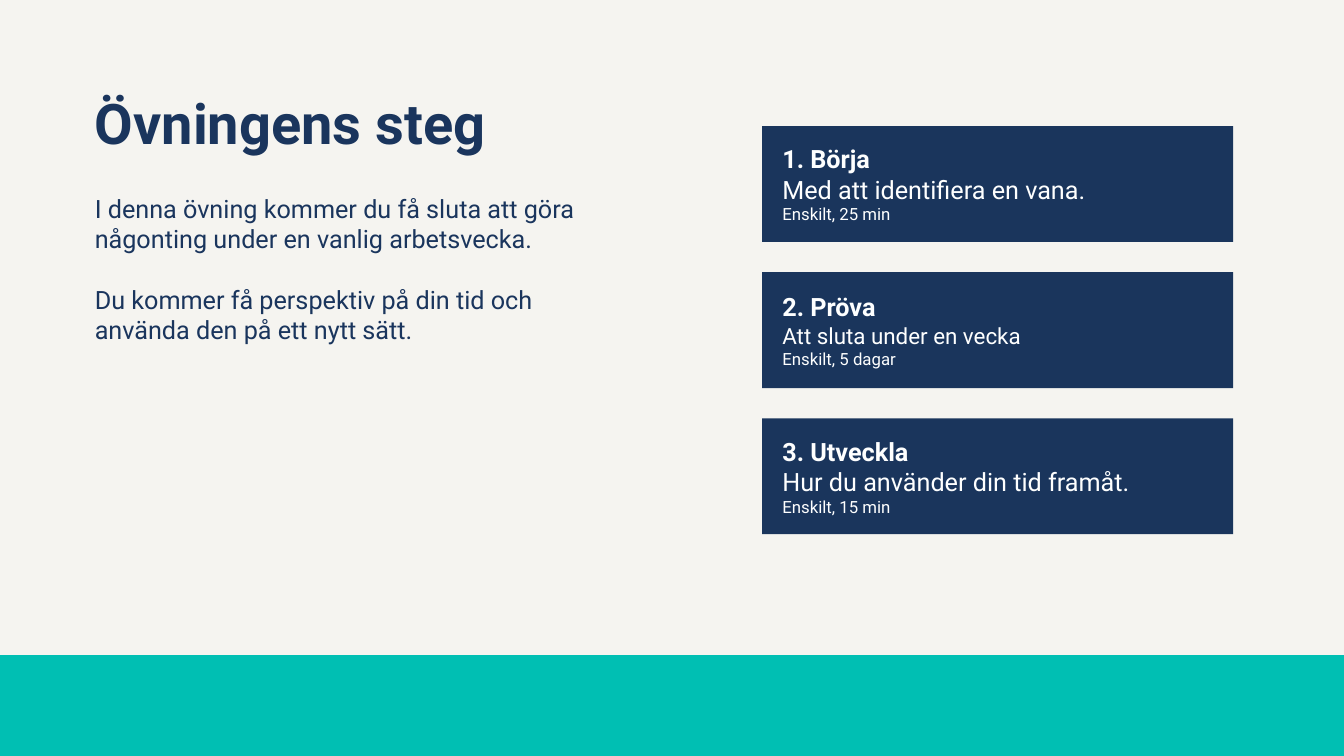
import pptx
import pptx.dml.color
import pptx.enum.shapes
import pptx.enum.text
import pptx.util
from pptx.util import Inches

COLORS = {
    "background": "F5F4F0",
    "band": "00BFB3",
    "heading": "1A355D",
    "card": "1A355C",
    "card_text": "FEFFFF",
}
FONT = "Roboto"
INTRODUCTION = [
    "I denna övning kommer du få sluta att göra någonting under en vanlig arbetsvecka.",
    "Du kommer få perspektiv på din tid och använda den på ett nytt sätt.",
]
STEPS = [
    ("1. Börja", "Med att identifiera en vana.", "Enskilt, 25 min", 18),
    ("2. Pröva", "Att sluta under en vecka", "Enskilt, 5 dagar", 16),
    ("3. Utveckla", "Hur du använder din tid framåt.", "Enskilt, 15 min", 18),
]
CARD_TOP = 1.25
CARD_PITCH = 1.45


def color(name):
    """Return the named colour."""
    return pptx.dml.color.RGBColor.from_string(COLORS[name])


def format_paragraph(paragraph, size, color_name, bold=False):
    """Left-align a paragraph and style its runs."""
    paragraph.alignment = pptx.enum.text.PP_ALIGN.LEFT
    for run in paragraph.runs:
        run.font.name = FONT
        run.font.size = pptx.util.Pt(size)
        run.font.bold = bold
        run.font.color.rgb = color(color_name)


def set_frame(text_frame, anchor, left=0, top=0, right=0, bottom=0):
    """Set wrapping, anchor and insets in inches."""
    text_frame.word_wrap = True
    text_frame.auto_size = pptx.enum.text.MSO_AUTO_SIZE.NONE
    text_frame.vertical_anchor = anchor
    text_frame.margin_left = Inches(left)
    text_frame.margin_top = Inches(top)
    text_frame.margin_right = Inches(right)
    text_frame.margin_bottom = Inches(bottom)


def add_rectangle(slide, left, top, width, height, color_name):
    """Add a flat rectangle without outline."""
    shape = slide.shapes.add_shape(
        pptx.enum.shapes.MSO_SHAPE.RECTANGLE,
        Inches(left), Inches(top), Inches(width), Inches(height))
    shape.shadow.inherit = False
    shape.fill.solid()
    shape.fill.fore_color.rgb = color(color_name)
    shape.line.fill.background()
    return shape


def add_title(slide, text):
    """Place and style the title placeholder."""
    title = slide.shapes.title
    title.left, title.top = Inches(0.94), Inches(0.94)
    title.width, title.height = Inches(11.5), Inches(0.61)
    title.text_frame.text = text
    set_frame(title.text_frame, pptx.enum.text.MSO_ANCHOR.BOTTOM)
    paragraph = title.text_frame.paragraphs[0]
    paragraph.line_spacing = 0.9
    format_paragraph(paragraph, 40, "heading", bold=True)


def add_introduction(slide, texts):
    """Add the introductory paragraphs."""
    box = slide.shapes.add_textbox(
        Inches(0.94), Inches(1.57), Inches(5.17), Inches(3.68))
    box.text_frame.text = "\n".join(texts)
    set_frame(box.text_frame, pptx.enum.text.MSO_ANCHOR.TOP, top=0.35)
    for paragraph in box.text_frame.paragraphs:
        paragraph.space_after = pptx.util.Pt(21.5)
        format_paragraph(paragraph, 18, "heading")


def add_step_card(slide, top, heading, description, duration, description_size):
    """Add one step with heading, description and duration."""
    card = add_rectangle(slide, 7.56, top, 4.67, 1.15, "card")
    card.text_frame.text = "\n".join((heading, description, duration))
    set_frame(card.text_frame, pptx.enum.text.MSO_ANCHOR.MIDDLE, 0.2, 0.05, 0.1, 0.05)
    sizes = (18, description_size, 12)
    for index, paragraph in enumerate(card.text_frame.paragraphs):
        format_paragraph(paragraph, sizes[index], "card_text", bold=index == 0)


def main():
    """Build and save the slide."""
    presentation = pptx.Presentation()
    presentation.slide_width = Inches(13.33)
    presentation.slide_height = Inches(7.5)
    slide = presentation.slides.add_slide(presentation.slide_layouts[5])
    slide.background.fill.solid()
    slide.background.fill.fore_color.rgb = color("background")
    add_rectangle(slide, 0, 6.5, 13.33, 1, "band")
    add_title(slide, "Övningens steg")
    add_introduction(slide, INTRODUCTION)
    for index, step in enumerate(STEPS):
        add_step_card(slide, CARD_TOP + index * CARD_PITCH, *step)
    presentation.save("out.pptx")


if __name__ == "__main__":
    main()
